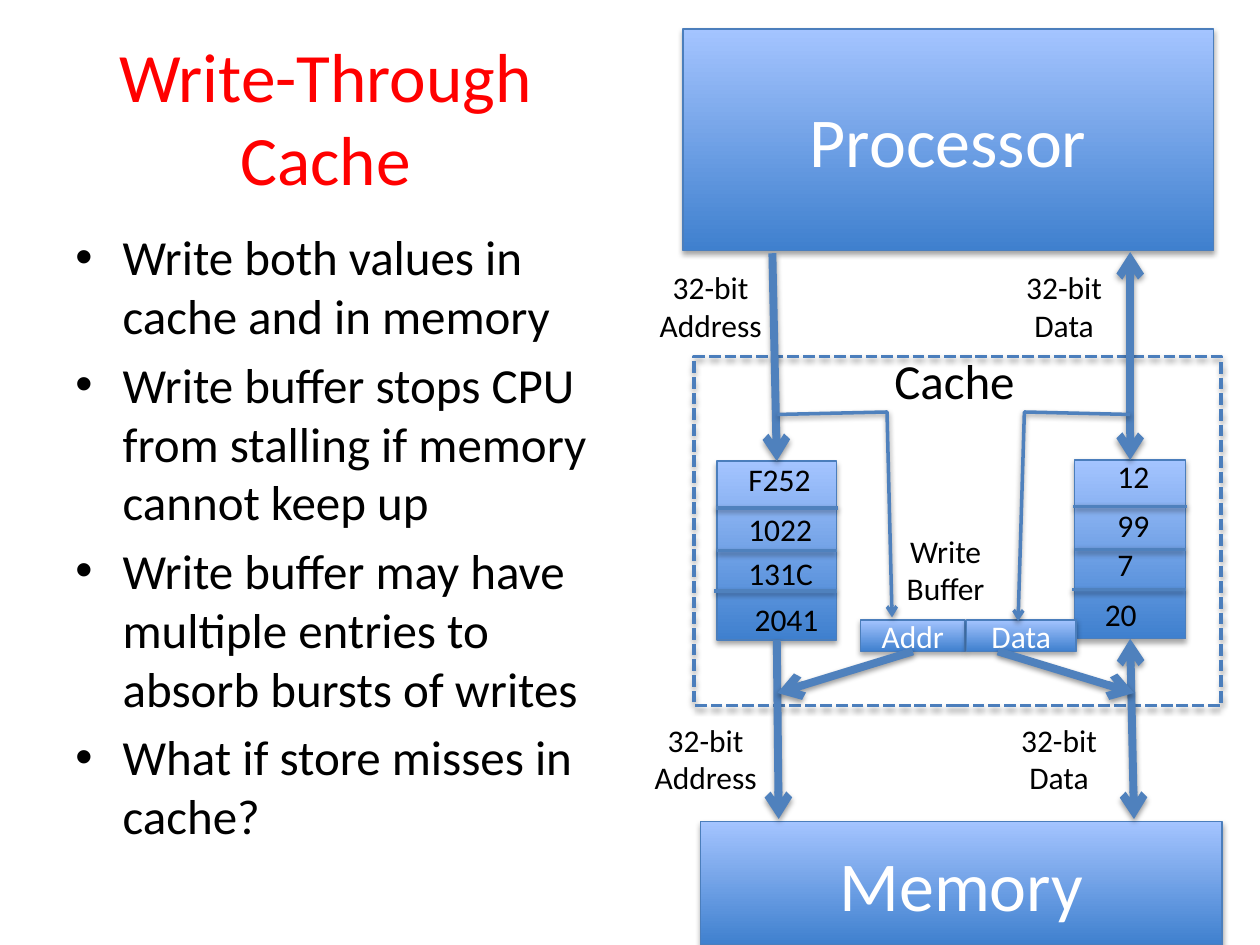
from lxml.etree import SubElement
from pptx import Presentation
from pptx.dml.color import RGBColor
from pptx.enum.dml import MSO_LINE
from pptx.enum.shapes import MSO_CONNECTOR, MSO_SHAPE
from pptx.enum.text import MSO_ANCHOR, PP_ALIGN
from pptx.oxml.ns import qn
from pptx.util import Pt

PX = 9144
BLUE, EDGE = "4F81BD", "4B7EBC"
TOP, BOTTOM = 0, 2


def paint(color, code):
    """Set a colour from a hex string."""
    color.rgb = RGBColor.from_string(code)


def scale(*nums):
    """Turn px lengths into EMU."""
    return [n * PX for n in nums]


def shade(shape, dist=23000, alpha=35000):
    """Give a shape or connector a soft shadow below it."""
    props = shape._element.spPr
    for old in props.findall(qn("a:effectLst")):
        props.remove(old)
    glow = SubElement(SubElement(props, qn("a:effectLst")), qn("a:outerShdw"),
                      blurRad="40000", dist=str(dist), dir="5400000", rotWithShape="0")
    tint = SubElement(glow, qn("a:srgbClr"), val="000000")
    SubElement(tint, qn("a:alpha"), val=str(alpha))


def stroke(shape, width, code=BLUE, head=False, tail=False):
    """Style an outline, with arrows where asked."""
    paint(shape.line.color, code)
    shape.line.width = Pt(width)
    for name, wanted in (("a:headEnd", head), ("a:tailEnd", tail)):
        if wanted:
            SubElement(shape.line._get_or_add_ln(), qn(name), type="arrow")


def style(para, size, code, align):
    """Set the font and alignment of a paragraph."""
    para.alignment = align
    para.font.size, para.font.name = Pt(size), "Calibri"
    paint(para.font.color, code)


def write(slide, box, lines, size=18, code="000000", align=PP_ALIGN.CENTER, wrap=False):
    """Add a text box with one paragraph for each line."""
    frame = slide.shapes.add_textbox(*scale(*box)).text_frame
    frame.word_wrap = wrap
    frame.text = "\n".join(lines)
    for para in frame.paragraphs:
        style(para, size, code, align)
    return frame


def block(slide, box, text="", size=18):
    """Add a shaded gradient box with centred text."""
    shape = slide.shapes.add_shape(MSO_SHAPE.RECTANGLE, *scale(*box))
    shape.fill.gradient()
    shape.fill.gradient_angle = 90
    for stop, code in zip(shape.fill.gradient_stops, ("3F80CE", "A4C4FF")):
        paint(stop.color, code)
    stroke(shape, 0.75, EDGE)
    shade(shape)
    frame = shape.text_frame
    frame.vertical_anchor = MSO_ANCHOR.MIDDLE
    frame.text = text
    style(frame.paragraphs[0], size, "FFFFFF", PP_ALIGN.CENTER)
    return shape


def link(slide, start, end, width=4.5, head=False, tail=True, begin=None, stop=None):
    """Draw a straight line, joined to (shape, side) pairs if given."""
    line = slide.shapes.add_connector(MSO_CONNECTOR.STRAIGHT, *scale(*start, *end))
    if begin:
        line.begin_connect(*begin)
    if stop:
        line.end_connect(*stop)
    stroke(line, width, BLUE, head, tail)
    shade(line, 20000, 38000)


def bend(slide, points):
    """Draw an open path that ends in an arrow."""
    path = slide.shapes.build_freeform(*points[0], scale=PX)
    path.add_line_segments(points[1:], close=False)
    shape = path.convert_to_shape()
    shape.fill.background()
    stroke(shape, 2, tail=True)
    shade(shape, 20000, 38000)


def bullets(slide, box, items):
    """Write the bullet list."""
    frame = write(slide, box, items, 28, align=PP_ALIGN.LEFT, wrap=True)
    for para in frame.paragraphs:
        para.space_before = Pt(5.6)
        props = para._p.get_or_add_pPr()
        props.set("marL", "342900")
        props.set("indent", "-342900")
        font = props.find(qn("a:defRPr"))
        for tag, key, val in (("a:buFont", "typeface", "Arial"), ("a:buChar", "char", "•")):
            font.addprevious(SubElement(props, qn(tag), {key: val}))


def column(slide, box, cells):
    """Draw a stack of cache cells from (text, x, y) entries."""
    left, top, width, high = box
    shape = block(slide, box)
    for y, x, end in ((37, -1, 1), (71, 0, 0), (103, -2, 0)):
        link(slide, (left + x, top + y), (left + width + end, top + y), 2, tail=False)
    for text, x, y in cells:
        write(slide, (left + x, top + y, 20 + 13 * len(text), 40), [text], align=PP_ALIGN.LEFT)
    return shape


def buffer(slide, box):
    """Draw the write buffer and return its address part."""
    left, top, width, high = box
    part = block(slide, (left, top, 83, high), "Addr")
    block(slide, (left + 84, top, width - 84, high), "Data")
    write(slide, (left + 9, top - 75, 117, 71), ["Write Buffer"], wrap=True)
    return part


def cache(slide, box):
    """Draw the cache and all its lines to processor and memory."""
    left, top, width, high = box

    def at(x, y):
        return left + x, top + y

    frame = slide.shapes.add_shape(MSO_SHAPE.RECTANGLE, *scale(*box))
    frame.fill.background()
    stroke(frame, 2.25, EDGE)
    frame.line.dash_style = MSO_LINE.SQUARE_DOT
    shade(frame)
    write(slide, (*at(149, -10), 117, 57), ["Cache"], 28, align=PP_ALIGN.LEFT)
    addr = column(slide, (*at(18, 83), 95, 142),
                  (("F252", 15, -6), ("1022", 15, 34), ("131C", 15, 69), ("2041", 20, 105)))
    data = column(slide, (*at(302, 82), 88, 142),
                  (("12", 24, -7), ("99", 24, 32), ("7", 24, 63), ("20", 14, 102)))
    link(slide, at(62, -82), at(65, 83), stop=(addr, TOP))
    link(slide, at(65, 225), at(67, 367), begin=(addr, BOTTOM))
    link(slide, at(346, -83), at(346, 82), head=True, stop=(data, TOP))
    link(slide, at(346, 224), at(349, 367), head=True, begin=(data, BOTTOM))
    part = buffer(slide, (*at(132, 209), 171, 25))
    link(slide, at(174, 234), at(66, 267), begin=(part, BOTTOM))
    link(slide, at(241, 234), at(349, 267))
    bend(slide, (at(66, 46), at(153, 44), at(157, 207)))
    bend(slide, (at(346, 46), at(262, 44), at(257, 210)))
    for x, y in ((-38, -75), (-42, 284)):
        write(slide, (*at(x, y), 102, 71), ["32-bit", "Address"])
        write(slide, (*at(x + 291, y), 81, 71), ["32-bit", "Data"])


def main():
    """Build and save the slide."""
    deck = Presentation()
    deck.slide_width, deck.slide_height = scale(1000, 750)
    slide = deck.slides.add_slide(deck.slide_layouts[6])
    title = write(slide, (50, 30, 417, 125), ["Write-Through Cache"], 39.6, "FF0000", wrap=True)
    title.vertical_anchor = MSO_ANCHOR.MIDDLE
    bullets(slide, (50, 175, 442, 495), (
        "Write both values in cache and in memory",
        "Write buffer stops CPU from stalling if memory cannot keep up",
        "Write buffer may have multiple entries to absorb bursts of writes",
        "What if store misses in cache?"))
    block(slide, (542, 23, 421, 176), "Processor", 40)
    block(slide, (556, 652, 414, 98), "Memory", 40)
    cache(slide, (551, 283, 418, 277))
    deck.save("out.pptx")


if __name__ == "__main__":
    main()
